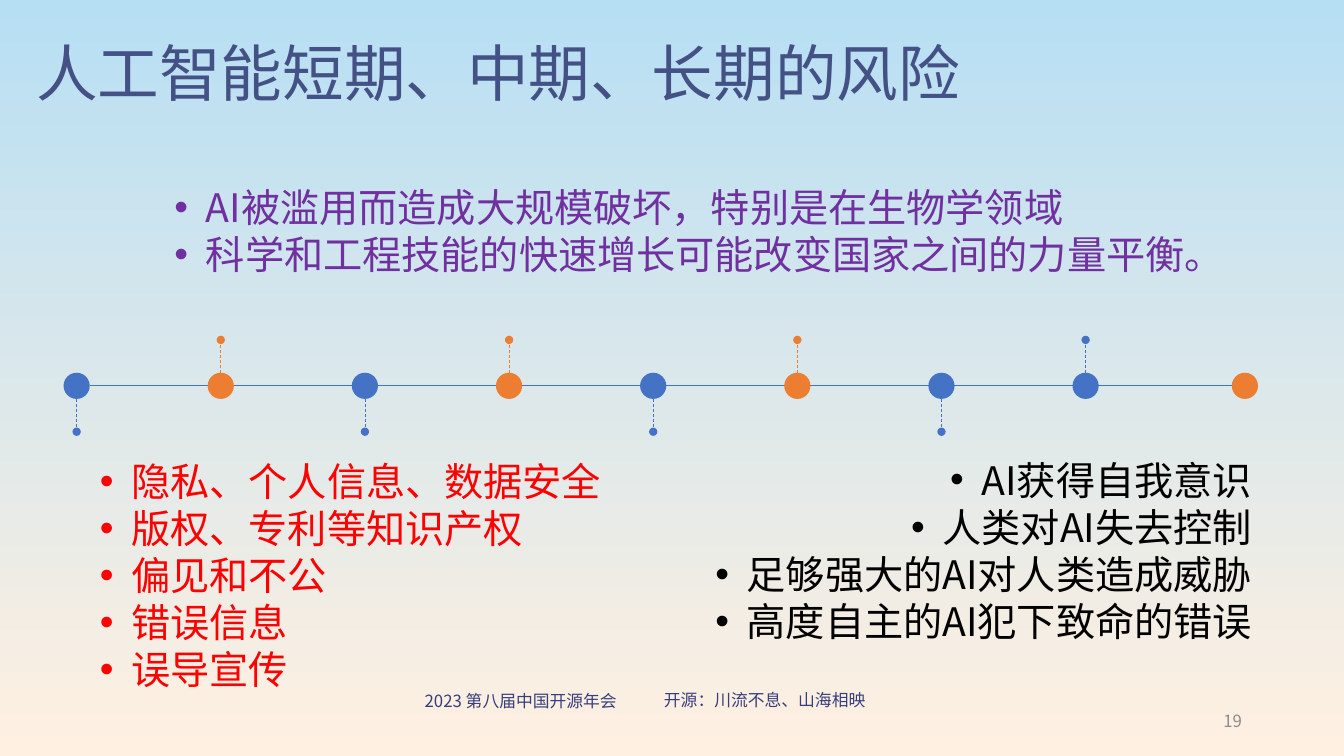
from dataclasses import dataclass

from lxml import etree
from pptx import Presentation
from pptx.dml.color import RGBColor
from pptx.enum.dml import MSO_LINE
from pptx.enum.shapes import MSO_CONNECTOR, MSO_SHAPE
from pptx.enum.text import MSO_ANCHOR, PP_ALIGN
from pptx.oxml.ns import qn
from pptx.util import Pt

LEFT, CENTER, RIGHT = PP_ALIGN.LEFT, PP_ALIGN.CENTER, PP_ALIGN.RIGHT
TOP, MIDDLE, BOTTOM = MSO_ANCHOR.TOP, MSO_ANCHOR.MIDDLE, MSO_ANCHOR.BOTTOM
OVAL, STRAIGHT, DASH = MSO_SHAPE.OVAL, MSO_CONNECTOR.STRAIGHT, MSO_LINE.DASH


@dataclass(frozen=True)
class Theme:
    font: str = "Noto Sans CJK SC"
    sky: str = "B7DFF4"
    sand: str = "FFF0E1"
    title: str = "445185"
    footer: str = "363E7D"
    number: str = "8C8C8C"
    blue: str = "4472C4"
    orange: str = "ED7D31"
    short_term: str = "FF0000"
    mid_term: str = "7030A0"
    long_term: str = "000000"
    title_size: float = 44
    risk_size: float = 28
    footer_size: float = 12
    hairline: float = 0.5


THEME = Theme()


def rgb(code):
    return RGBColor.from_string(code)


def add_text(slide, box, lines, size, color, align=LEFT, anchor=TOP,
             bullets=False, spacing=None):
    """Place one paragraph per line in box (left, top, width, height)."""
    frame = slide.shapes.add_textbox(*map(Pt, box)).text_frame
    frame.word_wrap = True
    frame.vertical_anchor = anchor
    if bullets:
        frame.margin_left = frame.margin_right = 0
        frame.margin_top = frame.margin_bottom = 0
    for index, line in enumerate(lines):
        paragraph = frame.add_paragraph() if index else frame.paragraphs[0]
        paragraph.alignment = align
        if spacing:
            paragraph.line_spacing = spacing
        if bullets:
            add_bullet(paragraph)
        run = paragraph.add_run()
        run.text = line
        run.font.size = Pt(size)
        run.font.name = THEME.font
        run.font.color.rgb = rgb(color)
        east_asian = etree.SubElement(run.font._element, qn("a:ea"))
        east_asian.set("typeface", THEME.font)


def add_bullet(paragraph, indent=22.5):
    properties = paragraph._p.get_or_add_pPr()
    properties.set("marL", str(Pt(indent)))
    properties.set("indent", str(-Pt(indent)))
    font = etree.SubElement(properties, qn("a:buFont"))
    font.set("typeface", "Arial")
    etree.SubElement(properties, qn("a:buChar")).set("char", "•")


def add_line(slide, start, end, color):
    connector = slide.shapes.add_connector(STRAIGHT, *map(Pt, (*start, *end)))
    connector.line.color.rgb = rgb(color)
    connector.line.width = Pt(THEME.hairline)
    etree.SubElement(connector._element.spPr, qn("a:effectLst"))
    return connector


def add_stem(slide, start, end, color):
    """Dashed line that ends in a small dot."""
    line = add_line(slide, start, end, color).line
    line.dash_style = DASH
    etree.SubElement(line._get_or_add_ln(), qn("a:tailEnd")).set("type", "oval")


def add_background(slide):
    fill = slide.background.fill
    fill.gradient()
    fill.gradient_angle = 270
    for stop, color, position in zip(fill.gradient_stops,
                                     (THEME.sky, THEME.sand), (0, 1)):
        stop.color.rgb = rgb(color)
        stop.position = position


def add_footer(slide, box):
    left, top, width, height = box
    add_text(slide, (left, top + 0.7, 198, 21.6), ["2023 第八届中国开源年会"],
             THEME.footer_size, THEME.footer, CENTER)
    add_text(slide, (left + 186.5, top, 173.5, 21.6), ["开源：川流不息、山海相映"],
             THEME.footer_size, THEME.footer, CENTER)
    add_text(slide, (left + width - 216, top + height - 28.8, 216, 28.8), ["19"],
             THEME.footer_size, THEME.number, RIGHT, MIDDLE)


def add_timeline(slide, box):
    """Dots at equal steps plus an end dot; stems alternate below and above."""
    left, top, width, height = box
    dot, step = 18.7, 102.96
    axis = top + height / 2
    blue, orange = THEME.blue, THEME.orange
    colors = [blue, orange, blue, orange, blue, orange, blue, blue]
    centers = [left + dot / 2 + step * i for i in range(len(colors))]
    end = left + width - dot / 2

    add_line(slide, (left + dot, axis), (left + width - dot, axis), blue)
    for center, color in zip(centers + [end], colors + [orange]):
        milestone = slide.shapes.add_shape(
            OVAL, *map(Pt, (center - dot / 2, axis - dot / 2, dot, dot)))
        milestone.shadow.inherit = False
        milestone.fill.solid()
        milestone.fill.fore_color.rgb = rgb(color)
        milestone.line.fill.background()
    for index, (center, color) in enumerate(zip(centers, colors)):
        side = -1 if index % 2 else 1
        add_stem(slide, (center, axis + side * dot / 2),
                 (center, axis + side * height / 2), color)


def build_slide(slide):
    add_background(slide)
    add_footer(slide, (273, 488.9, 621.2, 40.3))
    add_text(slide, (18.7, 16.6, 875.5, 76.3), ["人工智能短期、中期、长期的风险"],
             THEME.title_size, THEME.title, anchor=MIDDLE, spacing=0.9)

    # Short-term, long-term and mid-term risks
    add_text(slide, (71.3, 324.7, 360.7, 169.9),
             ["隐私、个人信息、数据安全", "版权、专利等知识产权", "偏见和不公",
              "错误信息", "误导宣传"],
             THEME.risk_size, THEME.short_term, anchor=BOTTOM, bullets=True)
    add_text(slide, (464.4, 324.7, 429.8, 135.4),
             ["AI获得自我意识", "人类对AI失去控制", "足够强大的AI对人类造成威胁",
              "高度自主的AI犯下致命的错误"],
             THEME.risk_size, THEME.long_term, RIGHT, BOTTOM, bullets=True)
    add_text(slide, (124.6, 131, 769.6, 67.7),
             ["AI被滥用而造成大规模破坏，特别是在生物学领域",
              "科学和工程技能的快速增长可能改变国家之间的力量平衡。"],
             THEME.risk_size, THEME.mid_term, bullets=True)

    add_timeline(slide, (45.4, 242.8, 853.2, 65.6))


def main():
    deck = Presentation()
    deck.slide_width, deck.slide_height = Pt(960), Pt(540)
    build_slide(deck.slides.add_slide(deck.slide_layouts[6]))
    deck.save("out.pptx")


if __name__ == "__main__":
    main()
